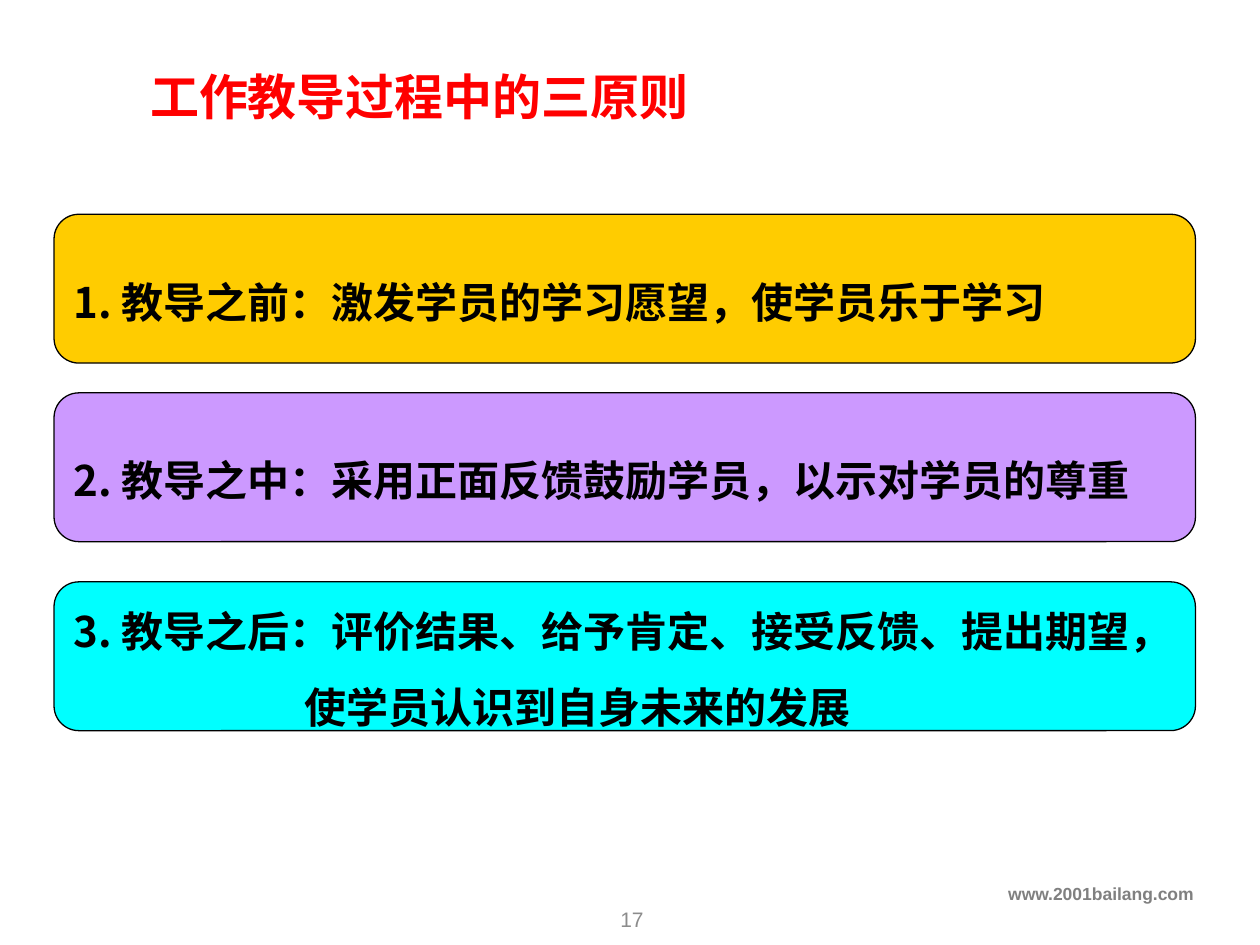
from pptx import Presentation
from pptx.dml.color import RGBColor
from pptx.enum.shapes import MSO_SHAPE
from pptx.enum.text import MSO_ANCHOR, PP_ALIGN
from pptx.oxml.ns import qn
from pptx.util import Cm, Pt

ROUND = MSO_SHAPE.ROUNDED_RECTANGLE
PLAIN = MSO_SHAPE.FLOWCHART_ALTERNATE_PROCESS
MIDDLE, TOP = MSO_ANCHOR.MIDDLE, MSO_ANCHOR.TOP
LEFT, CENTER, RIGHT = PP_ALIGN.LEFT, PP_ALIGN.CENTER, PP_ALIGN.RIGHT

HAN, LATIN = "Noto Sans CJK SC", "Arial"
COLORS = {
    "title": "FF0000", "text": "000000", "site": "808080", "page": "8C8C8C",
    "before": "FFCC00", "during": "CC99FF", "after": "00FFFF",
}

TITLE = "工作教导过程中的三原则"
SITE = "www.2001bailang.com"
PAGE = "17"
# colour, top in cm, lines
RULES = [
    ("before", 4.32, ["1. 教导之前：激发学员的学习愿望，使学员乐于学习"]),
    ("during", 7.92, ["2. 教导之中：采用正面反馈鼓励学员，以示对学员的尊重"]),
    ("after", 11.73, ["3. 教导之后：评价结果、给予肯定、接受反馈、提出期望，",
                      "使学员认识到自身未来的发展"]),
]
CARD_X, CARD_W, CARD_H = 1.09, 23.01, 3
HANG = 4.65  # indent of a card's second line


def rgb(key):
    return RGBColor.from_string(COLORS[key])


def write(shape, lines, size, color, font=HAN, bold=True, align=LEFT,
          anchor=MIDDLE, wrap=False, space=None):
    frame = shape.text_frame
    frame.word_wrap = wrap
    frame.vertical_anchor = anchor
    frame.text = "\n".join(lines)
    for num, para in enumerate(frame.paragraphs):
        para.alignment = align
        para.line_spacing = space
        if num:
            para._p.get_or_add_pPr().set("marL", str(Cm(HANG)))
        face = para.font
        face.name, face.size, face.bold = font, Pt(size), bold
        face.color.rgb = rgb(color)
        for run in para.runs:
            props = run._r.get_or_add_rPr()
            props.append(props.makeelement(qn("a:ea"), {"typeface": font}))


def add_box(slide, kind, x, y, w, h, fill=None):
    box = slide.shapes.add_shape(kind, Cm(x), Cm(y), Cm(w), Cm(h))
    box.shadow.inherit = False
    if fill:
        box.fill.solid()
        box.fill.fore_color.rgb = rgb(fill)
        box.line.color.rgb = rgb("text")
        box.line.width = Pt(0.75)
    else:
        box.fill.background()
        box.line.fill.background()
    return box


def main():
    deck = Presentation()
    deck.slide_width, deck.slide_height = Cm(25.4), Cm(19.05)
    slide = deck.slides.add_slide(deck.slide_layouts[6])

    site = slide.shapes.add_textbox(Cm(0), Cm(17.68), Cm(24.31), Cm(0.89))
    write(site, [SITE], 10, "site", LATIN, align=RIGHT, anchor=TOP, wrap=True)

    title = add_box(slide, PLAIN, 2.69, 1.04, 13.97, 1.8)
    write(title, [TITLE], 28, "title")

    for fill, top, lines in RULES:
        card = add_box(slide, ROUND, CARD_X, top, CARD_W, CARD_H, fill)
        write(card, lines, 24, "text", space=1.5)

    page = slide.shapes.add_textbox(Cm(9.88), Cm(18.01), Cm(5.72), Cm(1.02))
    write(page, [PAGE], 12, "page", LATIN, bold=False, align=CENTER, wrap=True)

    deck.save("out.pptx")


if __name__ == "__main__":
    main()
